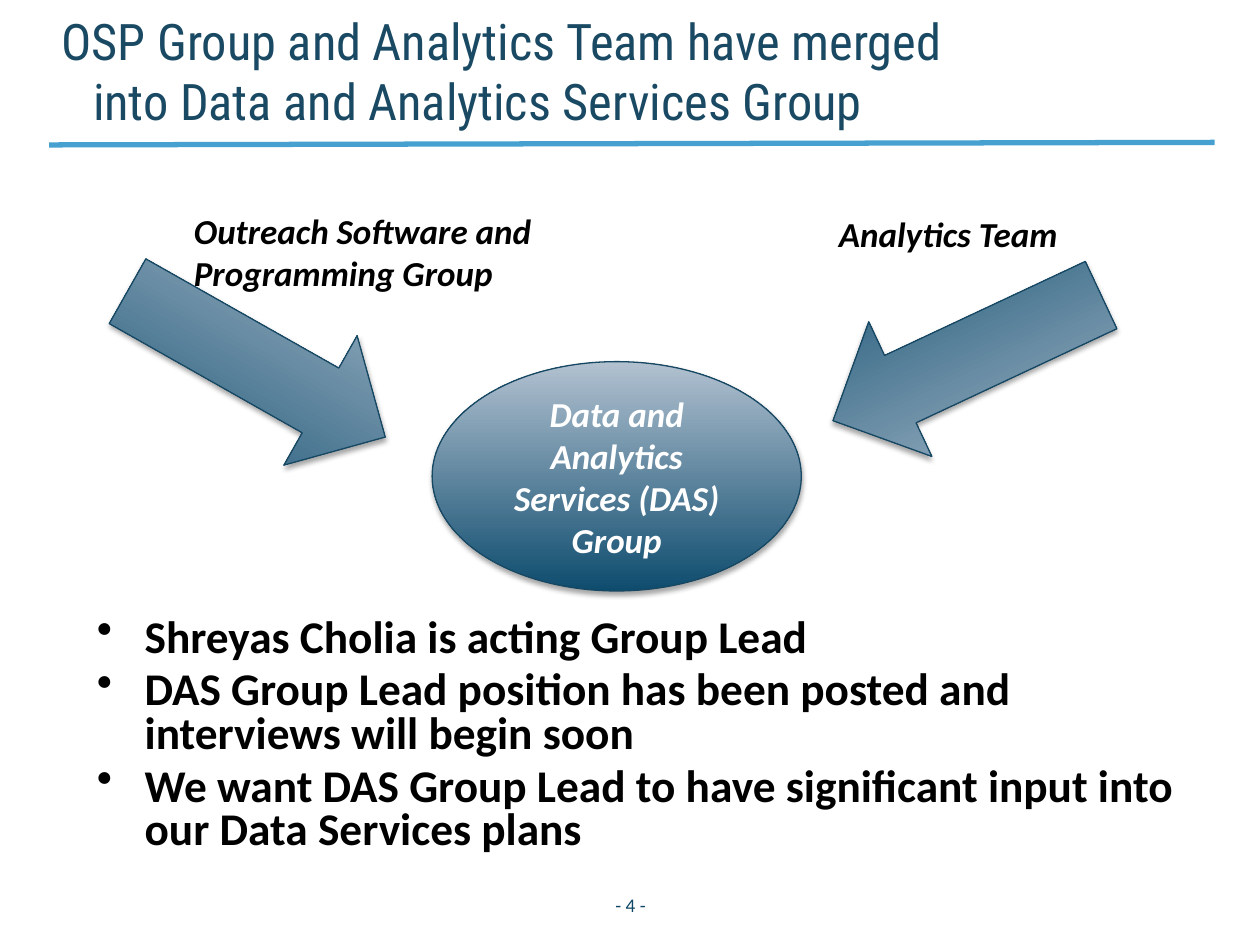
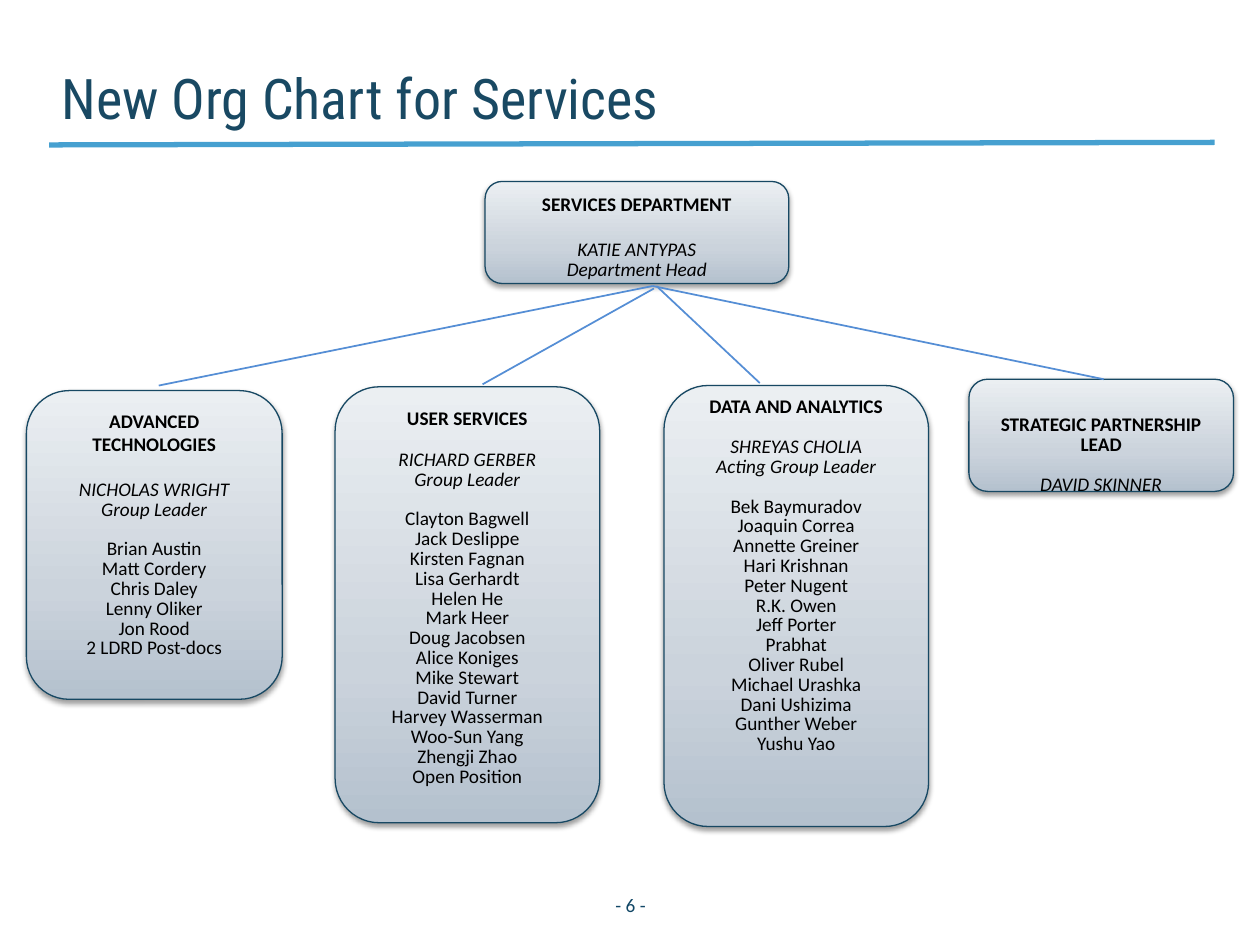
"""Build two slides on the merged analytics group and the services org chart."""
from dataclasses import dataclass
from typing import Any, NamedTuple

from lxml import etree
from pptx import Presentation
from pptx.dml.color import RGBColor
from pptx.enum.shapes import MSO_CONNECTOR, MSO_SHAPE
from pptx.enum.text import MSO_ANCHOR, PP_ALIGN
from pptx.oxml.ns import qn
from pptx.util import Inches, Pt

STRAIGHT = MSO_CONNECTOR.STRAIGHT
ARROW, OVAL = MSO_SHAPE.RIGHT_ARROW, MSO_SHAPE.OVAL
ORG_SHAPE = MSO_SHAPE.FLOWCHART_ALTERNATE_PROCESS
LEFT, CENTER = PP_ALIGN.LEFT, PP_ALIGN.CENTER
TOP, MIDDLE, BOTTOM = MSO_ANCHOR.TOP, MSO_ANCHOR.MIDDLE, MSO_ANCHOR.BOTTOM


class Area(NamedTuple):
    """Left, top, width and height in inches."""
    left: float
    top: float
    width: float
    height: float


class Link(NamedTuple):
    """Start and end points of a line in inches."""
    x1: float
    y1: float
    x2: float
    y2: float


class Surface(NamedTuple):
    """Gradient stops and shadow opacity and distance of a shape."""
    stops: tuple[tuple[int, str], ...]
    shadow_opacity: int
    shadow_distance: float


@dataclass(frozen=True)
class Theme:
    """Colours, fonts and type sizes of the deck."""
    title_font: str = "Roboto Condensed"
    body_font: str = "Calibri"
    title: str = "194963"
    rule: str = "46A0D0"
    footer: str = "114766"
    outline: str = "174863"
    link: str = "558ED5"
    text: str = "000000"
    inverse: str = "FFFFFF"
    long_title_size: float = 28.8
    title_size: float = 32
    bullet_size: float = 25.9
    label_size: float = 20
    small_size: float = 11
    deep: Surface = Surface(((0, "0E4C6E"), (100, "B2C1D0")), 35, 1.8)
    pale: Surface = Surface(((0, "B4C1CE"), (35, "CBD3DC"), (100, "EBEFF2")), 38, 1.6)


THEME = Theme()


@dataclass(frozen=True)
class TextStyle:
    """Character and paragraph format of a text."""
    size: float
    color: str = THEME.text
    font: str = THEME.body_font
    bold: bool = False
    italic: bool = False
    align: Any = LEFT
    spacing: float = 1.0
    before: float = 0
    indent: float = 0
    bullet: str = ""


@dataclass(frozen=True)
class Line:
    """One paragraph with its style and the space before it."""
    text: str
    style: TextStyle
    before: float = 0


@dataclass(frozen=True)
class Unit:
    """A box of the org chart."""
    area: Area
    heading: tuple[str, ...]
    leader: tuple[str, ...]
    members: tuple[str, ...] = ()
    heading_spacing: float = 1.0
    leader_gap: float = 16.1
    top_inset: float = 0.05


LONG_TITLE = TextStyle(THEME.long_title_size, THEME.title, THEME.title_font, indent=0.25)
TITLE = TextStyle(THEME.title_size, THEME.title, THEME.title_font, indent=0.25)
FOOTER = TextStyle(THEME.small_size, THEME.footer, align=CENTER)
LABEL = TextStyle(THEME.label_size, bold=True, italic=True)
MERGED = TextStyle(THEME.label_size, THEME.inverse, bold=True, italic=True, align=CENTER)
BULLET = TextStyle(THEME.bullet_size, bold=True, spacing=0.8, indent=0.38, bullet="•")
LEADER = TextStyle(THEME.small_size, italic=True, align=CENTER, spacing=0.5)
MEMBER = TextStyle(THEME.small_size, align=CENTER, spacing=0.5)

BULLET_GAP = 5.2
LINE_GAP = 4.7
MEMBER_GAP = 16.1

BULLETS = (
    "Shreyas Cholia is acting Group Lead",
    "DAS Group Lead position has been posted and interviews will begin soon",
    "We want DAS Group Lead to have significant input into our Data Services plans",
)
MERGE_ARROWS = ((Area(0.86, 2.3, 2.35, 1.18), 29.5), (Area(6.5, 2.25, 2.35, 1.18), 154.9))
MERGING_TEAMS = (
    (Area(1.44, 1.61, 3.18, 0.77), "Outreach Software and Programming Group"),
    (Area(6.56, 1.64, 2.04, 0.44), "Analytics Team"),
)
UNITS = (
    Unit(Area(3.85, 1.44, 2.41, 0.81), ("SERVICES DEPARTMENT",),
         ("KATIE ANTYPAS", "Department Head"), leader_gap=18.1),
    Unit(Area(0.21, 3.1, 2.03, 2.45), ("ADVANCED TECHNOLOGIES",),
         ("NICHOLAS WRIGHT", "Group Leader"),
         ("Brian Austin", "Matt Cordery", "Chris Daley", "Lenny Oliker", "Jon Rood",
          "2 LDRD Post-docs"), leader_gap=18.1),
    Unit(Area(5.27, 3.06, 2.1, 3.5), ("DATA AND ANALYTICS",),
         ("SHREYAS CHOLIA", "Acting Group Leader"),
         ("Bek Baymuradov", "Joaquin Correa", "Annette Greiner", "Hari Krishnan",
          "Peter Nugent", "R.K. Owen", "Jeff Porter", "Prabhat", "Oliver Rubel",
          "Michael Urashka", "Dani Ushizima", "Gunther Weber", "Yushu Yao"),
         heading_spacing=0.5),
    Unit(Area(2.66, 3.07, 2.1, 3.46), ("USER SERVICES",),
         ("RICHARD GERBER", "Group Leader"),
         ("Clayton Bagwell", "Jack Deslippe", "Kirsten Fagnan", "Lisa Gerhardt",
          "Helen He", "Mark Heer", "Doug Jacobsen", "Alice Koniges", "Mike Stewart",
          "David Turner", "Harvey Wasserman", "Woo-Sun Yang", "Zhengji Zhao",
          "Open Position")),
    Unit(Area(7.69, 3.01, 2.1, 0.89), ("STRATEGIC PARTNERSHIP", "LEAD"),
         ("DAVID SKINNER",), heading_spacing=0.5, top_inset=0.3),
)
REPORTING_LINKS = (
    Link(5.18, 2.27, 8.76, 3.01),
    Link(5.21, 2.27, 6.03, 3.04),
    Link(5.18, 2.27, 1.26, 3.06),
    Link(5.19, 2.29, 3.83, 3.05),
)


def inches(values: tuple[float, ...]) -> list[Any]:
    """Convert numbers to lengths."""
    return [Inches(value) for value in values]


def apply_format(target: Any, values: dict[str, Any]) -> None:
    """Set each named attribute on the target."""
    for name, value in values.items():
        setattr(target, name, value)


def write_lines(frame: Any, lines: list[Line], anchor: Any = TOP,
                insets: tuple[float, ...] = (0.1, 0.05, 0.1, 0.05)) -> None:
    """Fill a text frame with styled paragraphs."""
    left, top, right, bottom = inches(insets)
    apply_format(frame, {
        "word_wrap": True, "vertical_anchor": anchor, "margin_left": left,
        "margin_top": top, "margin_right": right, "margin_bottom": bottom,
    })
    for number, line in enumerate(lines):
        paragraph = frame.add_paragraph() if number else frame.paragraphs[0]
        style = line.style
        apply_format(paragraph, {
            "alignment": style.align, "line_spacing": style.spacing,
            "space_before": Pt(line.before if number else 0),
        })
        properties = paragraph._p.get_or_add_pPr()
        if style.indent:
            properties.set("marL", str(Inches(style.indent)))
            properties.set("indent", str(-Inches(style.indent)))
        if style.bullet:
            etree.SubElement(properties, qn("a:buChar"), char=style.bullet)
        run = paragraph.add_run()
        run.text = line.text
        apply_format(run.font, {
            "name": style.font, "size": Pt(style.size),
            "bold": style.bold, "italic": style.italic,
        })
        run.font.color.rgb = RGBColor.from_string(style.color)


def add_text(slide: Any, area: Area, lines: list[Line], **layout: Any) -> None:
    """Add a text box."""
    write_lines(slide.shapes.add_textbox(*inches(area)).text_frame, lines, **layout)


def add_color(parent: Any, color: str) -> Any:
    """Append a colour element to an XML parent."""
    return etree.SubElement(parent, qn("a:srgbClr"), val=color)


def add_surface(slide: Any, kind: Any, area: Area, surface: Surface) -> Any:
    """Add a preset shape with gradient, outline and soft shadow."""
    shape = slide.shapes.add_shape(kind, *inches(area))
    shape.fill.gradient()
    shape.fill.gradient_angle = 90
    properties = shape._element.spPr
    stop_list = properties.find(qn("a:gradFill")).find(qn("a:gsLst"))
    for stop in list(stop_list):
        stop_list.remove(stop)
    for position, color in surface.stops:
        add_color(etree.SubElement(stop_list, qn("a:gs"), pos=str(position * 1000)), color)
    shape.line.color.rgb = RGBColor.from_string(THEME.outline)
    shape.line.width = Pt(0.75)
    shape.shadow.inherit = False
    shadow = etree.SubElement(
        properties.find(qn("a:effectLst")), qn("a:outerShdw"), blurRad=str(Pt(3.1)),
        dist=str(Pt(surface.shadow_distance)), dir="5400000", rotWithShape="0")
    etree.SubElement(add_color(shadow, THEME.text), qn("a:alpha"),
                     val=str(surface.shadow_opacity * 1000))
    return shape


def add_link(slide: Any, link: Link, color: str, width: float) -> None:
    """Add a straight line without shadow."""
    connector = slide.shapes.add_connector(STRAIGHT, *inches(link))
    connector.line.color.rgb = RGBColor.from_string(color)
    connector.line.width = Pt(width)
    etree.SubElement(connector._element.spPr, qn("a:effectLst"))


def start_slide(deck: Any, title: str, style: TextStyle, number: int) -> Any:
    """Add a slide with title, rule and page number."""
    slide = deck.slides.add_slide(deck.slide_layouts[6])
    add_link(slide, Link(0.39, 1.15, 9.64, 1.13), THEME.rule, 3)
    add_text(slide, Area(0.39, 0.2, 7.46, 0.84), [Line(title, style)],
             anchor=BOTTOM, insets=(0.1, 0, 0.1, 0))
    add_text(slide, Area(4.5, 6.98, 1.01, 0.4), [Line(f"- {number} -", FOOTER)],
             anchor=MIDDLE)
    return slide


def build_merger(deck: Any) -> None:
    """Draw the two teams flowing into one group."""
    slide = start_slide(
        deck, "OSP Group and Analytics Team have merged into Data and Analytics "
        "Services Group", LONG_TITLE, 4)
    add_text(slide, Area(0.67, 4.86, 8.76, 2.1),
             [Line(text, BULLET, BULLET_GAP) for text in BULLETS])
    for area, angle in MERGE_ARROWS:
        add_surface(slide, ARROW, area, THEME.deep).rotation = angle
    for area, team in MERGING_TEAMS:
        add_text(slide, area, [Line(team, LABEL)])
    group = add_surface(slide, OVAL, Area(3.43, 2.87, 2.93, 1.82), THEME.deep)
    write_lines(group.text_frame,
                [Line("Data and Analytics Services (DAS) Group", MERGED)], MIDDLE)


def add_unit(slide: Any, unit: Unit) -> None:
    """Draw one box of the org chart."""
    heading = TextStyle(THEME.small_size, bold=True, align=CENTER,
                        spacing=unit.heading_spacing)
    sections = ((unit.heading, heading, 0), (unit.leader, LEADER, unit.leader_gap),
                (unit.members, MEMBER, MEMBER_GAP))
    lines = [Line(text, style, LINE_GAP if row else gap)
             for texts, style, gap in sections for row, text in enumerate(texts)]
    box = add_surface(slide, ORG_SHAPE, unit.area, THEME.pale)
    write_lines(box.text_frame, lines, insets=(0.09, unit.top_inset, 0.09, 0.05))


def build_org_chart(deck: Any) -> None:
    """Draw the department and the units that report to it."""
    slide = start_slide(deck, "New Org Chart for Services", TITLE, 6)
    for unit in UNITS:
        add_unit(slide, unit)
    for link in REPORTING_LINKS:
        add_link(slide, link, THEME.link, 1)


def main() -> None:
    """Build and save the deck."""
    deck = Presentation()
    deck.slide_width, deck.slide_height = Inches(10), Inches(7.5)
    build_merger(deck)
    build_org_chart(deck)
    deck.save("out.pptx")


if __name__ == "__main__":
    main()
